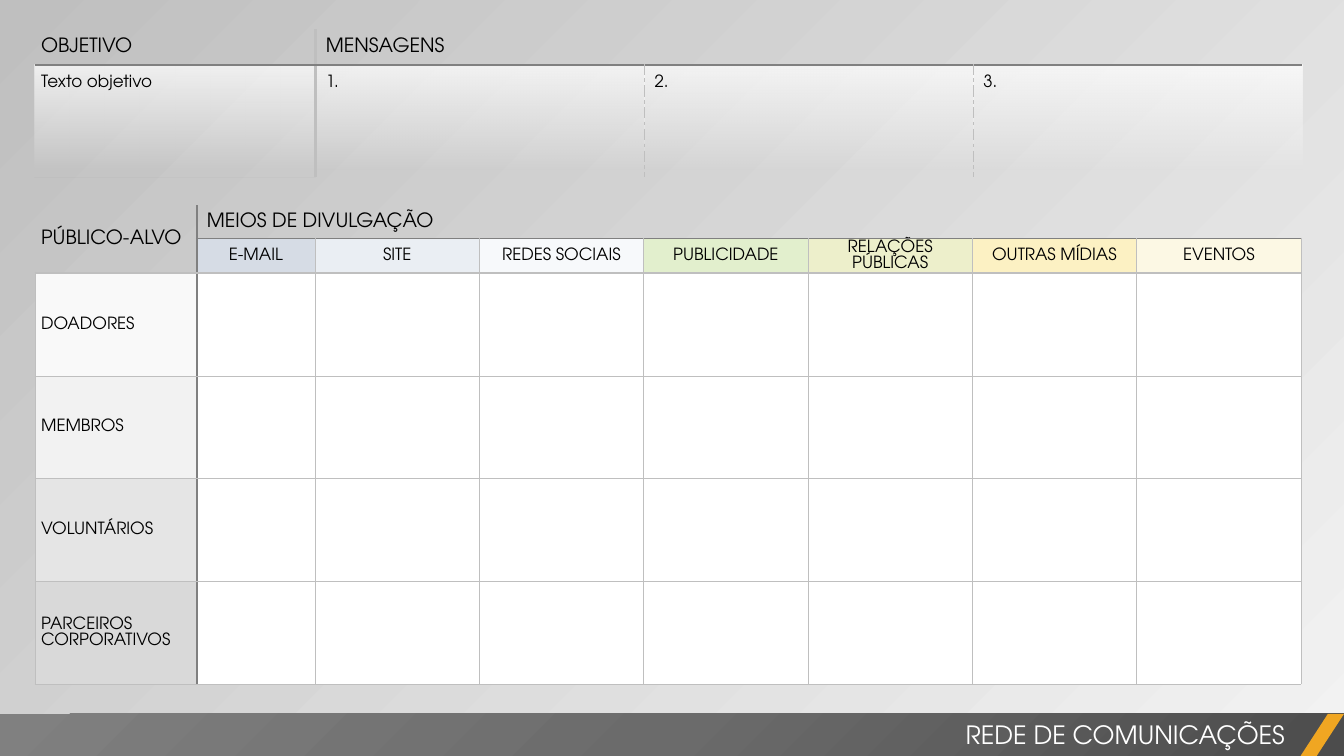
from pptx import Presentation
from pptx.util import Pt
from pptx.dml.color import RGBColor
from pptx.enum.shapes import MSO_SHAPE as Shape
from pptx.enum.text import MSO_ANCHOR as Anchor, PP_ALIGN as Align, MSO_AUTO_SIZE as Fit
from pptx.oxml import parse_xml
from pptx.oxml.ns import nsdecls, qn

# Content
TITLE = "REDE DE COMUNICAÇÕES"
HEADS = ["OBJETIVO", "MENSAGENS"]
NOTES = ["Texto objetivo", "1.", "2.", "3."]
GROUP, MEDIA = "PÚBLICO-ALVO", "MEIOS DE DIVULGAÇÃO"
CHANNELS = [("E-MAIL", "D6DCE5"), ("SITE", "EAEEF3"), ("REDES SOCIAIS", "F7F9FB"),
            ("PUBLICIDADE", "E2EFCD"), ("RELAÇÕES PÚBLICAS", "EDEFCB"),
            ("OUTRAS MÍDIAS", "FCF1C3"), ("EVENTOS", "FCF8E4")]
PUBLICS = [("DOADORES", "F9F9F9"), ("MEMBROS", "F2F2F2"),
           ("VOLUNTÁRIOS", "E5E5E5"), ("PARCEIROS CORPORATIVOS", "D9D9D9")]

FONT = "TeX Gyre Adventor"
LIGHT, DARK = "BFBFBF", "808080"
THIN, THICK = (LIGHT, 0.5, "solid"), (LIGHT, 2.25, "solid")
PLAIN_STYLE = "{2D5ABB26-0587-4C30-8999-92F81FD0307C}"
WIDE, HIGH = 960, 540
LEFT = 24.9
BAR = 510


def rgb(code):
    return RGBColor.from_string(code)


def grad(stops, aim):
    """Gradient fill from (position, colour, opacity) stops."""
    marks = "".join(
        f'<a:gs pos="{pos * 1000}"><a:srgbClr val="{code}">'
        f'<a:alpha val="{alpha * 1000}"/></a:srgbClr></a:gs>'
        for pos, code, alpha in stops)
    return parse_xml(f'<a:gradFill {nsdecls("a")} rotWithShape="1">'
                     f'<a:gsLst>{marks}</a:gsLst>{aim}</a:gradFill>')


def angle(deg):
    return f'<a:lin ang="{deg * 60000}" scaled="0"/>'


def swap(root, fill):
    """Put a gradient in place of the solid fill under root."""
    old = root.find(".//" + qn("a:solidFill"))
    old.getparent().replace(old, fill)


def write(frame, text, size, color="000000", align=Align.LEFT):
    para = frame.paragraphs[0]
    para.alignment = align
    run = para.add_run()
    run.text = text
    run.font.size, run.font.name = Pt(size), FONT
    run.font.color.rgb = rgb(color)


def make(top, cols, rows):
    table = shapes.add_table(len(rows), len(cols), Pt(LEFT), Pt(top),
                             Pt(sum(cols)), Pt(sum(rows))).table
    table.first_row = table.horz_banding = False
    table._tbl.tblPr.find(qn("a:tableStyleId")).text = PLAIN_STYLE
    for col, width in zip(table.columns, cols):
        col.width = Pt(width)
    for row, height in zip(table.rows, rows):
        row.height = Pt(height)
    return table


def put(cell, text, size, inset, top=0, align=Align.LEFT):
    cell.margin_left, cell.margin_top = Pt(inset), Pt(top)
    cell.margin_right = cell.margin_bottom = Pt(0)
    cell.vertical_anchor = Anchor.TOP if top else Anchor.MIDDLE
    write(cell.text_frame, text, size, align=align)


def paint(cell, color):
    cell.fill.solid()
    cell.fill.fore_color.rgb = rgb(color)


def rule(table, vert, horz):
    """Draw cell borders: vert(row, edge) and horz(edge, col) give each line."""
    for r in range(len(table.rows)):
        for c in range(len(table.columns)):
            edges = [("L", vert(r, c)), ("R", vert(r, c + 1)),
                     ("T", horz(r, c)), ("B", horz(r + 1, c))]
            props = table.cell(r, c)._tc.get_or_add_tcPr()
            lines = [(side, line) for side, line in edges if line]
            for i, (side, (color, width, dash)) in enumerate(lines):
                props.insert(i, parse_xml(
                    f'<a:ln{side} {nsdecls("a")} w="{Pt(width)}"><a:solidFill>'
                    f'<a:srgbClr val="{color}"/></a:solidFill>'
                    f'<a:prstDash val="{dash}"/></a:ln{side}>'))


def block(kind, left, width, color):
    shape = shapes.add_shape(kind, Pt(left), Pt(BAR), Pt(width), Pt(HIGH - BAR))
    shape.shadow.inherit = False
    shape.fill.solid()
    shape.fill.fore_color.rgb = rgb(color)
    shape.line.fill.background()
    return shape


# Slide and background
deck = Presentation()
deck.slide_width, deck.slide_height = Pt(WIDE), Pt(HIGH)
slide = deck.slides.add_slide(deck.slide_layouts[5])
shapes = slide.shapes
slide.background.fill.solid()
swap(slide._element.find(".//" + qn("p:bgPr")),
     grad([(0, "F2F2F2", 40), (100, LIGHT, 100)], angle(225)))

# Channel grid
grid = make(146.6, [115.7, 84.5] + [117.4] * 6, [23.75, 24.75] + [73.4] * 4)
grid.cell(0, 0).merge(grid.cell(1, 0))
grid.cell(0, 1).merge(grid.cell(0, 7))
put(grid.cell(0, 0), GROUP, 14, 4.5)
put(grid.cell(0, 1), MEDIA, 14, 7.2)
for c, (name, color) in enumerate(CHANNELS, 1):
    put(grid.cell(1, c), name, 12, 0, align=Align.CENTER)
    paint(grid.cell(1, c), color)
for r, (name, color) in enumerate(PUBLICS, 2):
    put(grid.cell(r, 0), name, 12, 4.5)
    paint(grid.cell(r, 0), color)
    for c in range(1, 8):
        paint(grid.cell(r, c), "FFFFFF")


def grid_vert(r, edge):
    if edge == 1:
        return DARK, 1.5, "solid"
    return THIN if r > 1 or (r == 1 and edge) else None


def grid_horz(edge, c):
    if edge == 1:
        return (DARK, 1, "solid") if c else None
    return {0: None, 2: THICK}.get(edge, THIN)


rule(grid, grid_vert, grid_horz)

# Footer bar and accent
bar = block(Shape.RECTANGLE, 0, WIDE, DARK)
swap(bar._element.spPr, grad(
    [(0, "4C4C4C", 100), (50, "6B6B6B", 100), (100, DARK, 100)],
    '<a:path path="circle"><a:fillToRect l="100000" t="100000"/></a:path>'))
accent = block(Shape.PARALLELOGRAM, 929, 31, "F0A622")
accent.adjustments[0] = 0.65

# Title, in front of the bar
title = shapes.title
title.left, title.top, title.width, title.height = Pt(378), Pt(510), Pt(547), Pt(29)
title.text_frame.auto_size = Fit.NONE
title.text_frame.vertical_anchor = Anchor.MIDDLE
write(title.text_frame, TITLE, 18, "FFFFFF", Align.RIGHT)
shapes._spTree.append(title._element)

# Goal and messages
goals = make(21, [200.7] + [234.8] * 3, [25.5, 80])
goals.cell(0, 1).merge(goals.cell(0, 3))
for c, text in enumerate(HEADS):
    put(goals.cell(0, c), text, 14, 7.2 if c else 4.5)
for c, text in enumerate(NOTES):
    cell = goals.cell(1, c)
    put(cell, text, 12, 7.2 if c else 4.5, top=7.2)
    paint(cell, "FFFFFF")
    swap(cell._tc.tcPr, grad([(0, "FFFFFF", 75), (93, "FFFFFF", 0)], angle(90)))


def goal_vert(r, edge):
    if edge == 1:
        return THICK
    return (LIGHT, 1, "sysDashDot") if r and edge in (2, 3) else None


rule(goals, goal_vert, lambda edge, c: (DARK, 2.25, "solid") if edge == 1 else None)

deck.save("out.pptx")
